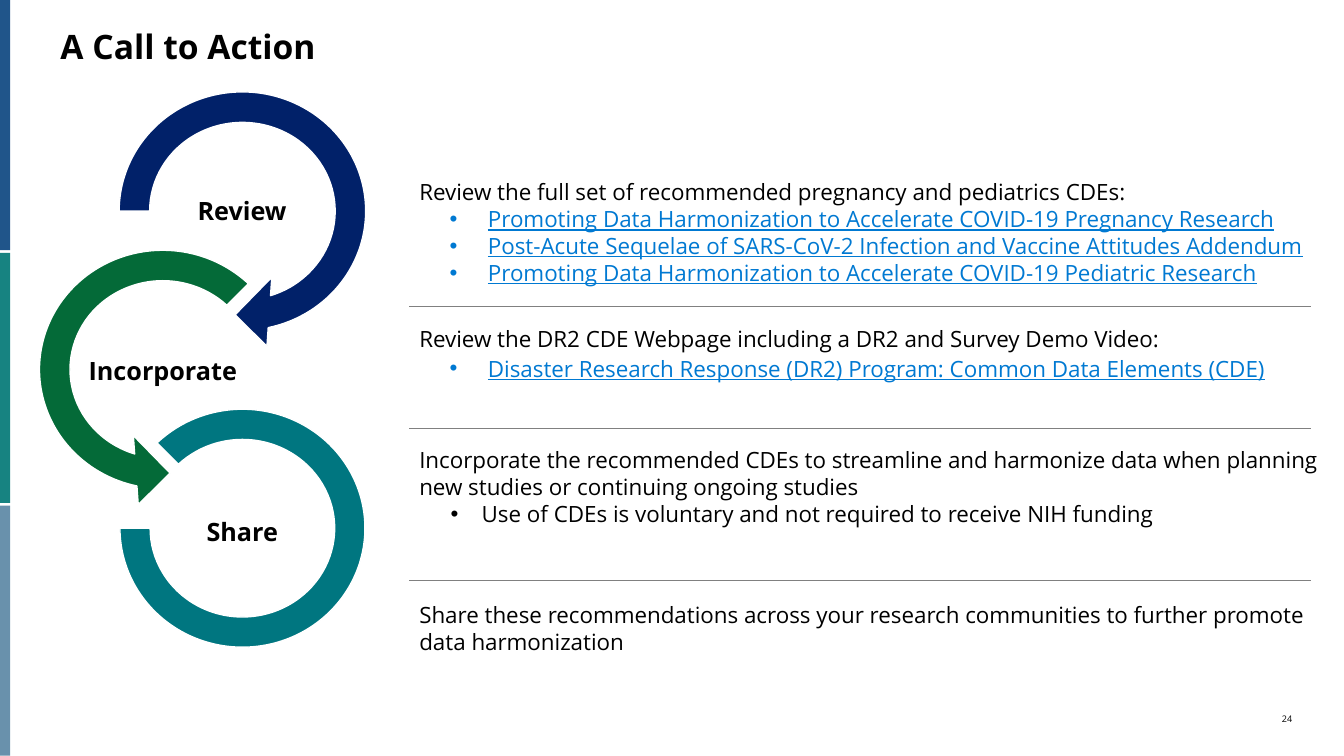
"""Build the "A Call to Action" slide with three stages and their follow-up lists."""

from dataclasses import dataclass

from lxml import etree
from pptx import Presentation
from pptx.dml.color import RGBColor
from pptx.enum.shapes import MSO_CONNECTOR, MSO_SHAPE
from pptx.enum.text import MSO_ANCHOR, MSO_AUTO_SIZE, PP_ALIGN
from pptx.oxml.ns import qn
from pptx.slide import Slide
from pptx.util import Pt

RECTANGLE = MSO_SHAPE.RECTANGLE
RIGHT_ARROW_ARC = MSO_SHAPE.CIRCULAR_ARROW
LEFT_ARROW_ARC = MSO_SHAPE.LEFT_CIRCULAR_ARROW
PLAIN_ARC = MSO_SHAPE.BLOCK_ARC
STRAIGHT = MSO_CONNECTOR.STRAIGHT
MIDDLE, TOP = MSO_ANCHOR.MIDDLE, MSO_ANCHOR.TOP
LEFT, CENTER, RIGHT = PP_ALIGN.LEFT, PP_ALIGN.CENTER, PP_ALIGN.RIGHT
NO_AUTOFIT = MSO_AUTO_SIZE.NONE

COLORS = {
    "text": "000000",
    "link": "0079D2",
    "rule": "808080",
    "outline": "FFFFFF",
    "navy": "012169",
    "green": "046A38",
    "teal": "007680",
    "bar blue": "20558A",
    "bar teal": "178381",
    "bar gray": "6991AC",
}
FONT = "Open Sans"
COMPARISON_LAYOUT = 4
BAR_WIDTH, BAR_HEIGHT, BAR_PITCH = 7.2, 178.6, 180.6
LABEL_WIDTH, LABEL_HEIGHT = 113, 54.7
LIST_LEFT, LIST_WIDTH = 292.3, 667
RULE_RIGHT = 936.7
RULE_TOPS = (218.9, 306, 414.7)


@dataclass(frozen=True)
class Box:
    """A rectangle in points."""

    left: float
    top: float
    width: float
    height: float

    def lengths(self) -> tuple[Pt, Pt, Pt, Pt]:
        """Return the rectangle as slide lengths."""
        return Pt(self.left), Pt(self.top), Pt(self.width), Pt(self.height)


@dataclass(frozen=True)
class Stage:
    """A ring segment and its label."""

    label: str
    preset: MSO_SHAPE
    box: Box
    adjustments: tuple[float, ...]
    color: str
    label_left: float
    label_top: float


@dataclass(frozen=True)
class Section:
    """A lead sentence with bulleted items."""

    top: float
    height: float
    lead: str
    items: tuple[str, ...] = ()
    links: bool = True
    margin: float = 49
    hanging: float = 27.4
    gap: float = 0


STAGES = (
    Stage("Review", RIGHT_ARROW_ARC, Box(71.3, 51.8, 203.8, 198),
          (0.11, 11.42, 45, 108, 0.125), "navy", 116.4, 123.1),
    Stage("Incorporate", LEFT_ARROW_ARC, Box(14.4, 164.9, 203.8, 198),
          (0.11, 11.42, 63, 189, 0.125), "green", 59.8, 237.1),
    Stage("Share", PLAIN_ARC, Box(85.7, 292.3, 175, 170),
          (135, 108, 0.127), "teal", 116.6, 352.1),
)

SECTIONS = (
    Section(123.8, 85, "Review the full set of recommended pregnancy and pediatrics CDEs:",
            ("Promoting Data Harmonization to Accelerate COVID-19 Pregnancy Research",
             "Post-Acute Sequelae of SARS-CoV-2 Infection and Vaccine Attitudes Addendum",
             "Promoting Data Harmonization to Accelerate COVID-19 Pediatric Research")),
    Section(228.5, 48.2, "Review the DR2 CDE Webpage including a DR2 and Survey Demo Video:",
            ("Disaster Research Response (DR2) Program: Common Data Elements (CDE)",), gap=2),
    Section(315.4, 85,
            "Incorporate the recommended CDEs to streamline and harmonize data when planning "
            "new studies or continuing ongoing studies",
            ("Use of CDEs is voluntary and not required to receive NIH funding",),
            links=False, margin=44.6, hanging=22.3),
    Section(425.5, 46.1,
            "Share these recommendations across your research communities to further promote "
            "data harmonization"),
)


def rgb(name: str) -> RGBColor:
    """Look up a named colour."""
    return RGBColor.from_string(COLORS[name])


def place(shape, box: Box) -> None:
    """Move and size a shape."""
    shape.left, shape.top, shape.width, shape.height = box.lengths()


def format_runs(paragraph, size: float, color: str = "text",
                bold: bool = False, underline: bool = False) -> None:
    """Format every run of a paragraph."""
    for run in paragraph.runs:
        run.font.name = FONT
        run.font.size = Pt(size)
        run.font.bold = bold
        run.font.underline = underline
        run.font.color.rgb = rgb(color)


def set_frame(frame, margin: float, anchor: MSO_ANCHOR) -> None:
    """Set equal margins, wrapping and anchoring."""
    frame.margin_left = frame.margin_right = Pt(margin)
    frame.margin_top = frame.margin_bottom = Pt(margin)
    frame.word_wrap = True
    frame.auto_size = NO_AUTOFIT
    frame.vertical_anchor = anchor


def set_bullet(paragraph, margin: float, hanging: float) -> None:
    """Give a paragraph a hanging bullet, or none without a hanging indent."""
    properties = paragraph._p.get_or_add_pPr()
    properties.set("marL", str(Pt(margin)))
    properties.set("indent", str(-Pt(hanging)))
    if hanging:
        etree.SubElement(properties, qn("a:buFont"), typeface="Arial")
        etree.SubElement(properties, qn("a:buChar"), char="•")
    else:
        etree.SubElement(properties, qn("a:buNone"))


def fill_line(frame, text: str, size: float, align: PP_ALIGN, bold: bool = False) -> None:
    """Write one formatted line."""
    frame.text = text
    paragraph = frame.paragraphs[0]
    paragraph.alignment = align
    paragraph.line_spacing = 1.0
    format_runs(paragraph, size, bold=bold)


def add_label(slide: Slide, text: str, box: Box, size: float,
              align: PP_ALIGN, anchor: MSO_ANCHOR, bold: bool = False) -> None:
    """Add a text box holding one line."""
    frame = slide.shapes.add_textbox(*box.lengths()).text_frame
    set_frame(frame, 0, anchor)
    fill_line(frame, text, size, align, bold)


def add_filled_shape(slide: Slide, preset: MSO_SHAPE, box: Box, color: str):
    """Add a flat shape without an outline."""
    shape = slide.shapes.add_shape(preset, *box.lengths())
    shape.shadow.inherit = False
    shape.fill.solid()
    shape.fill.fore_color.rgb = rgb(color)
    shape.line.fill.background()
    return shape


def add_stage(slide: Slide, stage: Stage) -> None:
    """Draw a ring segment with its label."""
    arc = add_filled_shape(slide, stage.preset, stage.box, stage.color)
    arc.line.color.rgb = rgb("outline")
    arc.line.width = Pt(1)
    for index, value in enumerate(stage.adjustments):
        arc.adjustments[index] = value
    label_box = Box(stage.label_left, stage.label_top, LABEL_WIDTH, LABEL_HEIGHT)
    add_label(slide, stage.label, label_box, 18, CENTER, MIDDLE, bold=True)


def fill_section(placeholder, section: Section) -> None:
    """Write a section into a body placeholder."""
    place(placeholder, Box(LIST_LEFT, section.top, LIST_WIDTH, section.height))
    frame = placeholder.text_frame
    set_frame(frame, 7.2, TOP)
    frame.margin_top = frame.margin_bottom = Pt(3.6)
    frame.text = "\n".join((section.lead, *section.items))
    for index, paragraph in enumerate(frame.paragraphs):
        is_item = index > 0
        is_link = is_item and section.links
        paragraph.level = int(is_item)
        set_bullet(paragraph, section.margin * is_item, section.hanging * is_item)
        paragraph.alignment = LEFT
        paragraph.line_spacing = 1.0
        paragraph.space_before = Pt(section.gap * is_item)
        format_runs(paragraph, 16, "link" if is_link else "text", underline=is_link)


def add_rule(slide: Slide, top: float) -> None:
    """Draw a thin line between two sections."""
    rule = slide.shapes.add_connector(STRAIGHT, Pt(LIST_LEFT), Pt(top), Pt(RULE_RIGHT), Pt(top))
    rule.line.color.rgb = rgb("rule")
    rule.line.width = Pt(0.5)
    etree.SubElement(rule._element.spPr, qn("a:effectLst"))


def main() -> None:
    """Build and save the presentation."""
    presentation = Presentation()
    presentation.slide_width, presentation.slide_height = Pt(960), Pt(540)
    slide = presentation.slides.add_slide(presentation.slide_layouts[COMPARISON_LAYOUT])
    title, *bodies = slide.placeholders
    place(title, Box(43.2, 18.7, 897, 28.8))
    set_frame(title.text_frame, 0, MIDDLE)
    fill_line(title.text_frame, "A Call to Action", 24, LEFT, bold=True)
    for index, color in enumerate(("bar blue", "bar teal", "bar gray")):
        bar = Box(0, index * BAR_PITCH, BAR_WIDTH, BAR_HEIGHT)
        add_filled_shape(slide, RECTANGLE, bar, color)
    for stage in STAGES:
        add_stage(slide, stage)
    for body, section in zip(bodies, SECTIONS):
        fill_section(body, section)
    for top in RULE_TOPS:
        add_rule(slide, top)
    add_label(slide, "24", Box(898.6, 509.8, 24.5, 7.9), 6.5, RIGHT, TOP)
    presentation.save("out.pptx")


if __name__ == "__main__":
    main()
